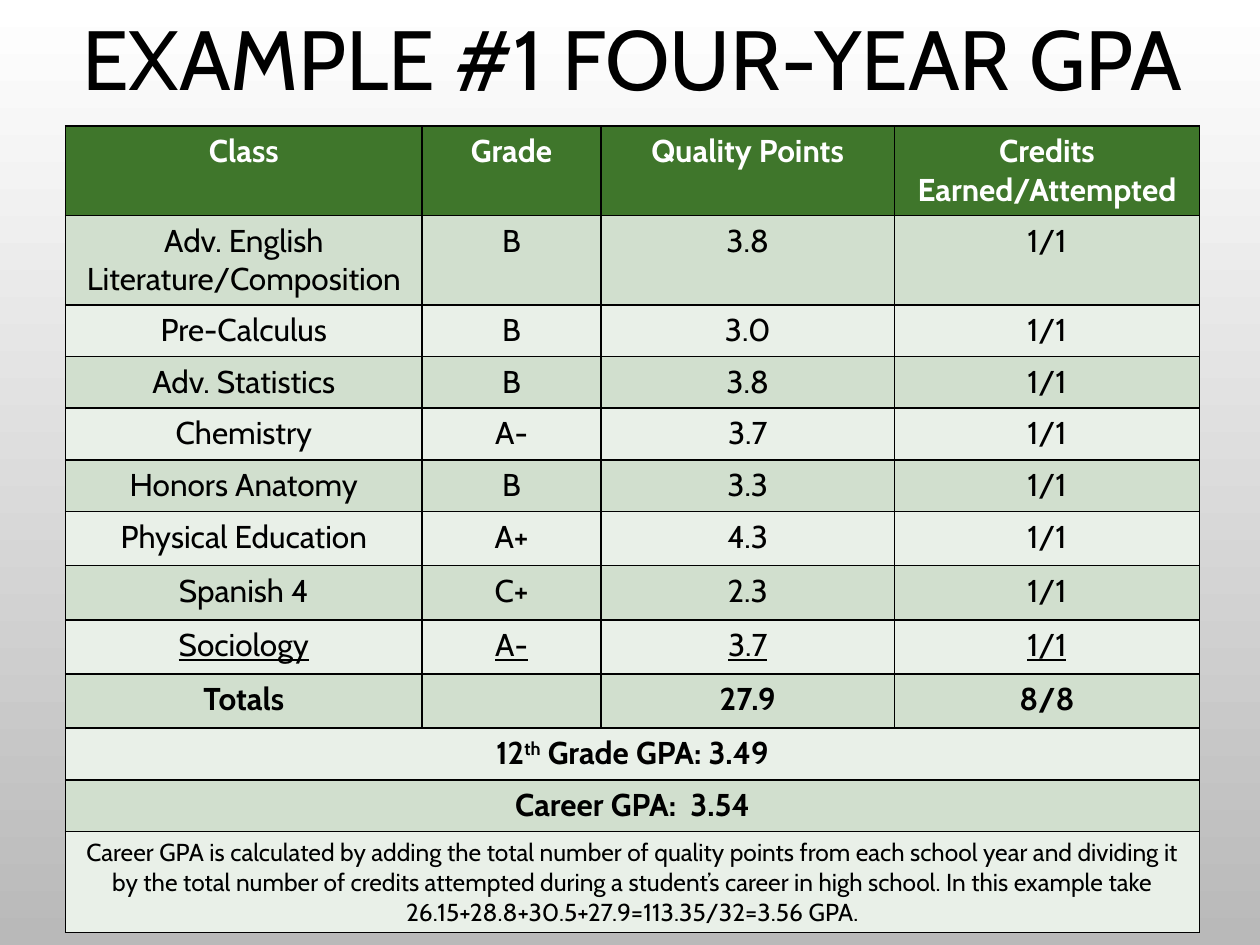
from pptx import Presentation
from pptx.dml.color import RGBColor
from pptx.enum import text
from pptx.oxml import parse_xml
from pptx.oxml.ns import nsdecls
from pptx.util import Inches, Pt

FONT = "Cabin"
BLACK = RGBColor(0x00, 0x00, 0x00)
WHITE = RGBColor(0xFF, 0xFF, 0xFF)
GRAY = RGBColor(0xB9, 0xB9, 0xB9)
GREEN = RGBColor(0x3F, 0x76, 0x2B)
BANDS = (RGBColor(0xE9, 0xF0, 0xE8), RGBColor(0xD1, 0xDF, 0xCE))

COLUMN_WIDTHS = (2.83, 1.42, 2.33, 2.42)
ROW_HEIGHTS = (0.71, 0.71, *[0.41] * 4, *[0.43] * 4, 0.41, 0.41, 0.8)
HEADER = ("Class", "Grade", "Quality Points", "Credits Earned/Attempted")
CLASSES = (
    ("Adv. English Literature/Composition", "B", "3.8"),
    ("Pre-Calculus", "B", "3.0"),
    ("Adv. Statistics", "B", "3.8"),
    ("Chemistry", "A-", "3.7"),
    ("Honors Anatomy", "B", "3.3"),
    ("Physical Education", "A+", "4.3"),
    ("Spanish 4", "C+", "2.3"),
    ("Sociology", "A-", "3.7"),
)
TOTALS = ("Totals", "", "27.9", "8/8")
YEAR_GPA = ("12", "th", " Grade GPA: 3.49")
CAREER_GPA = "Career GPA:  3.54"
EXPLANATION = (
    "Career GPA is calculated by adding the total number of quality points "
    "from each school year and dividing it by the total number of credits "
    "attempted during a student’s career in high school. In this example take "
    "26.15+28.8+30.5+27.9=113.35/32=3.56 GPA."
)


def set_background(s):
    fill = s.background.fill
    fill.gradient()
    fill.gradient_angle = 270
    for stop, color, position in zip(fill.gradient_stops, (WHITE, GRAY), (0, 1)):
        stop.color.rgb = color
        stop.position = position


def format_run(r, size, color=BLACK, bold=False, underline=False):
    r.font.name = FONT
    r.font.size = Pt(size)
    r.font.color.rgb = color
    r.font.bold = bold
    r.font.underline = underline


def add_title(s, title):
    tf = s.shapes.add_textbox(Inches(0.52), 0, Inches(9), Inches(1)).text_frame
    tf.word_wrap = True
    tf.vertical_anchor = text.MSO_ANCHOR.MIDDLE
    p = tf.paragraphs[0]
    p.text = title
    p.alignment = text.PP_ALIGN.CENTER
    p.line_spacing = 0.9
    format_run(p.runs[0], 48)


def style_cell(cell, color):
    tc_pr = cell._tc.get_or_add_tcPr()
    for side in ("lnL", "lnR", "lnT", "lnB"):
        tc_pr.append(parse_xml(
            f'<a:{side} {nsdecls("a")} w="{Pt(1)}"><a:solidFill>'
            f'<a:srgbClr val="{BLACK}"/></a:solidFill></a:{side}>'
        ))
    cell.fill.solid()
    cell.fill.fore_color.rgb = color


def write_cell(cell, parts, size=18, **style):
    p = cell.text_frame.paragraphs[0]
    p.alignment = text.PP_ALIGN.CENTER
    p.font.size = Pt(size)
    for part in parts:
        if part:
            r = p.add_run()
            r.text = part
            format_run(r, size, **style)
    return p


def write_row(table, row, values, **style):
    for column, value in enumerate(values):
        write_cell(table.cell(row, column), [value], **style)


def write_wide_row(table, row, parts, **style):
    cell = table.cell(row, 0)
    cell.merge(table.cell(row, len(COLUMN_WIDTHS) - 1))
    return write_cell(cell, parts, **style)


def add_gpa_table(s):
    table = s.shapes.add_table(
        len(ROW_HEIGHTS), len(COLUMN_WIDTHS),
        Inches(0.52), Inches(1), Inches(9), Inches(sum(ROW_HEIGHTS)),
    ).table
    for column, width in zip(table.columns, COLUMN_WIDTHS):
        column.width = Inches(width)
    for i, (row, height) in enumerate(zip(table.rows, ROW_HEIGHTS)):
        row.height = Inches(height)
        for cell in row.cells:
            style_cell(cell, BANDS[i % 2] if i else GREEN)

    write_row(table, 0, HEADER, color=WHITE, bold=True)
    for i, values in enumerate(CLASSES, start=1):
        write_row(table, i, (*values, "1/1"), underline=i == len(CLASSES))
    write_row(table, 9, TOTALS, bold=True)
    p = write_wide_row(table, 10, YEAR_GPA, bold=True)
    p.runs[1].font._element.set("baseline", "30000")
    write_wide_row(table, 11, [CAREER_GPA], bold=True)
    write_wide_row(table, 12, [EXPLANATION], size=14)


def main():
    prs = Presentation()
    prs.slide_width, prs.slide_height = Inches(10), Inches(7.5)
    s = prs.slides.add_slide(prs.slide_layouts[6])
    set_background(s)
    add_title(s, "EXAMPLE #1 FOUR-YEAR GPA")
    add_gpa_table(s)
    prs.save("out.pptx")


if __name__ == "__main__":
    main()
